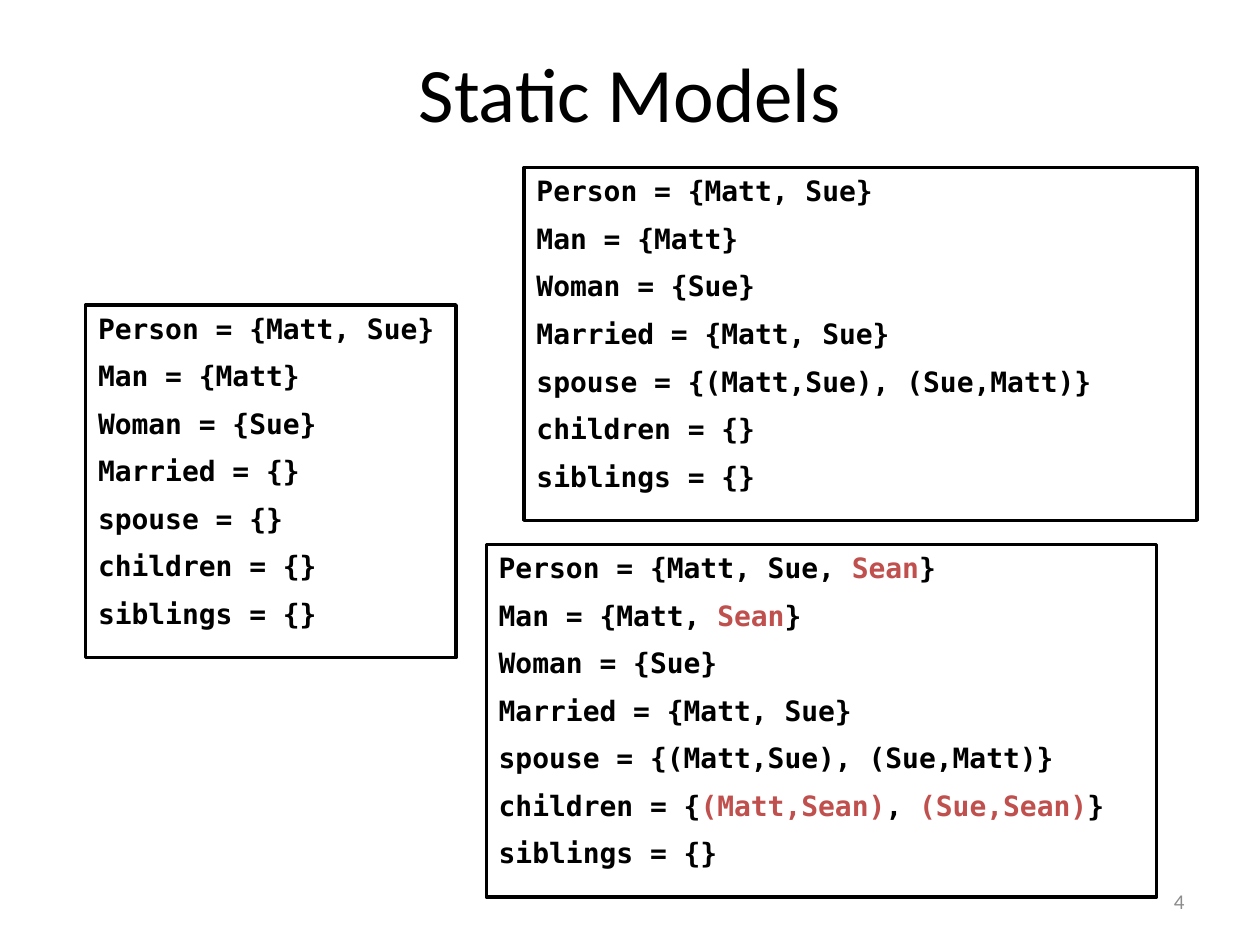
from lxml.etree import SubElement
from pptx import Presentation
from pptx.dml.color import RGBColor
from pptx.enum.shapes import MSO_SHAPE
from pptx.enum.text import MSO_ANCHOR, MSO_AUTO_SIZE, PP_ALIGN
from pptx.oxml.ns import qn
from pptx.util import Inches, Pt

COLORS = {"ink": "000000", "added": "C0504D", "muted": "8C8C8C"}
TITLE_FORMAT = {"name": "Calibri", "size": Pt(44), "bold": False}
NUMBER_FORMAT = {"name": "Calibri", "size": Pt(12)}
CODE_FORMAT = {"name": "DejaVu Sans Mono", "size": Pt(16), "bold": True}

deck = Presentation()
deck.slide_width, deck.slide_height = Inches(10), Inches(7.5)
slide = deck.slides.add_slide(deck.slide_layouts[5])


def share(left, top, width, height):
    across, down = deck.slide_width / 100, deck.slide_height / 100
    return [int(v) for v in (left * across, top * down, width * across, height * down)]


def write(paragraph, text, font_format, color):
    run = paragraph.add_run()
    run.text = text
    for key, value in font_format.items():
        setattr(run.font, key, value)
    run.font.color.rgb = RGBColor.from_string(COLORS[color])


heading = slide.shapes.title
heading.left, heading.top, heading.width, heading.height = share(5, 4, 90, 11.33)
heading.text_frame.vertical_anchor = MSO_ANCHOR.MIDDLE
heading_line = heading.text_frame.paragraphs[0]
heading_line.alignment = PP_ALIGN.CENTER
write(heading_line, "Static Models", TITLE_FORMAT, "ink")

page_number = slide.shapes.add_textbox(*share(71.7, 92.67, 23.3, 5.33)).text_frame
page_number.word_wrap = True
page_number.vertical_anchor = MSO_ANCHOR.MIDDLE
page_number.paragraphs[0].alignment = PP_ALIGN.RIGHT
write(page_number.paragraphs[0], "4", NUMBER_FORMAT, "muted")

SETS = ["Person", "Man", "Woman", "Married", "spouse", "children", "siblings"]
COUPLE = "Matt, Sue"
SPOUSES = "(Matt,Sue), (Sue,Matt)"
MODEL_HEIGHT = 37.33
# Text between bars is highlighted as newly added.
MODELS = [
    (6.8, 32.27, 29.4, [COUPLE, "Matt", "Sue", "", "", "", ""]),
    (41.6, 17.73, 53.4, [COUPLE, "Matt", "Sue", COUPLE, SPOUSES, "", ""]),
    (38.6, 57.6, 53.2, [COUPLE + ", |Sean|", "Matt, |Sean|", "Sue", COUPLE, SPOUSES,
                        "|(Matt,Sean)|, |(Sue,Sean)|", ""]),
]

for left, top, width, members in MODELS:
    model = slide.shapes.add_shape(
        MSO_SHAPE.RECTANGLE, *share(left, top, width, MODEL_HEIGHT))
    model.shadow.inherit = False
    model.fill.background()
    model.line.color.rgb = RGBColor.from_string(COLORS["ink"])
    model.line.width = Pt(2)
    statements = model.text_frame
    statements.auto_size = MSO_AUTO_SIZE.SHAPE_TO_FIT_TEXT
    statements.vertical_anchor = MSO_ANCHOR.TOP
    for row, (name, values) in enumerate(zip(SETS, members)):
        statement = statements.add_paragraph() if row else statements.paragraphs[0]
        statement.alignment = PP_ALIGN.LEFT
        space_before = SubElement(statement._p.get_or_add_pPr(), qn("a:spcBef"))
        SubElement(space_before, qn("a:spcPct"), val="50000")
        for part, text in enumerate(f"{name} = {{{values}}}".split("|")):
            write(statement, text, CODE_FORMAT, "added" if part % 2 else "ink")

deck.save("out.pptx")
